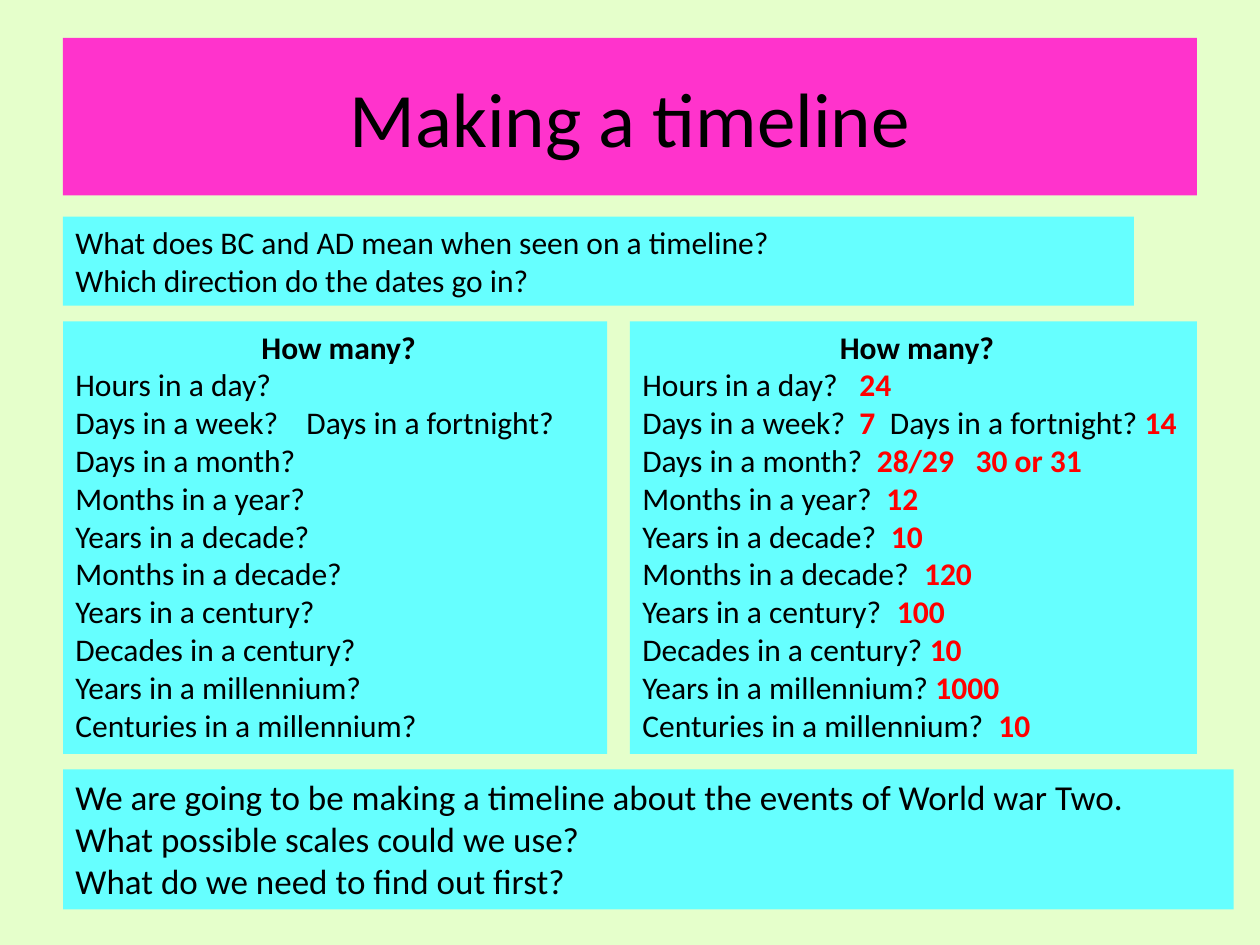
"""Build a slide of questions and answers about making a timeline."""
import dataclasses

import lxml.etree
import pptx
import pptx.dml.color
import pptx.enum.text
import pptx.oxml.ns
import pptx.util

Pt = pptx.util.Pt
ALIGN = pptx.enum.text.PP_ALIGN
ANCHOR = pptx.enum.text.MSO_ANCHOR
FIT = pptx.enum.text.MSO_AUTO_SIZE

ROWS = [
    (("Hours in a day?\t", "24"), (124,)),
    (("Days in a week?\t", "7", "\tDays in a fortnight? ", "14"), (124, 141.5)),
    (("Days in a month?\t", "28/29\t30 or 31"), (134, 190.5)),
    (("Months in a year?\t", "12"), (139.5,)),
    (("Years in a decade?\t", "10"), (142,)),
    (("Months in a decade?\t", "120"), (161,)),
    (("Years in a century?\t", "100"), (145.5,)),
    (("Decades in a century? ", "10"), ()),
    (("Years in a millennium? ", "1000"), ()),
    (("Centuries in a millennium?\t", "10"), (203.5,)),
]
INTRO = ["What does BC and AD mean when seen on a timeline?",
         "Which direction do the dates go in?"]
TASK = ["We are going to be making a timeline about the events of World war Two.",
        "What possible scales could we use?",
        "What do we need to find out first?"]


@dataclasses.dataclass
class Theme:
    page: str = "E5FFCB"
    title: str = "FF33CC"
    panel: str = "66FFFF"
    ink: str = "000000"
    answer: str = "FF0000"
    font: str = "Calibri"
    head: int = 44
    body: int = 18
    large: int = 20


def tint(fill, code):
    fill.solid()
    fill.fore_color.rgb = pptx.dml.color.RGBColor.from_string(code)


class Maker:
    def __init__(self, slide, theme):
        self.slide, self.theme = slide, theme
        tint(slide.background.fill, theme.page)

    def panel(self, left, top, width, height, color):
        box = self.slide.shapes.add_textbox(Pt(left), Pt(top), Pt(width), Pt(height))
        tint(box.fill, color)
        frame = box.text_frame
        frame.word_wrap = True
        frame.auto_size = FIT.SHAPE_TO_FIT_TEXT
        return frame

    def line(self, frame, parts, size, bold=False, align=ALIGN.LEFT, stops=()):
        first = frame.paragraphs[0]
        para = frame.add_paragraph() if first.runs else first
        para.alignment = align
        for num, text in enumerate(parts):
            answer = num % 2 == 1
            run = para.add_run()
            run.text = text
            run.font.name = self.theme.font
            run.font.size = Pt(size)
            run.font.bold = bold or answer
            tint(run.font.fill, self.theme.answer if answer else self.theme.ink)
        if stops:
            self.tabs(para, stops)

    def tabs(self, para, stops):
        name = pptx.oxml.ns.qn
        tabs = lxml.etree.SubElement(para._p.get_or_add_pPr(), name("a:tabLst"))
        for stop in stops:
            lxml.etree.SubElement(tabs, name("a:tab"), pos=str(int(Pt(stop))), algn="l")

    def title(self, text, *place):
        frame = self.panel(*place, self.theme.title)
        frame.auto_size = FIT.NONE
        frame.vertical_anchor = ANCHOR.MIDDLE
        self.line(frame, [text], self.theme.head, align=ALIGN.CENTER)

    def notice(self, lines, size, *place):
        frame = self.panel(*place, self.theme.panel)
        for text in lines:
            self.line(frame, [text], size)

    def quiz(self, rows, *place):
        frame = self.panel(*place, self.theme.panel)
        size = self.theme.body
        self.line(frame, [" How many?"], size, bold=True, align=ALIGN.CENTER)
        for parts, stops in rows:
            self.line(frame, parts, size, stops=stops)


def main():
    deck = pptx.Presentation()
    deck.slide_width, deck.slide_height = Pt(720), Pt(540)
    theme = Theme()
    maker = Maker(deck.slides.add_slide(deck.slide_layouts[6]), theme)
    blank = []
    for parts, _ in ROWS:
        asks = [part.strip() for part in parts[::2]]
        blank.append((["\t".join(asks)], (132,) if len(asks) > 1 else ()))

    left = 36
    maker.title("Making a timeline", left, 21.6, 648, 90)
    maker.notice(INTRO, theme.body, left, 123.8, 612, 50.9)
    maker.quiz(blank, left, 183.6, 311, 247.2)
    maker.quiz(ROWS, 360, 183.6, 324, 247.2)
    maker.notice(TASK, theme.large, left, 439.7, 669, 80)
    deck.save("out.pptx")


if __name__ == "__main__":
    main()
